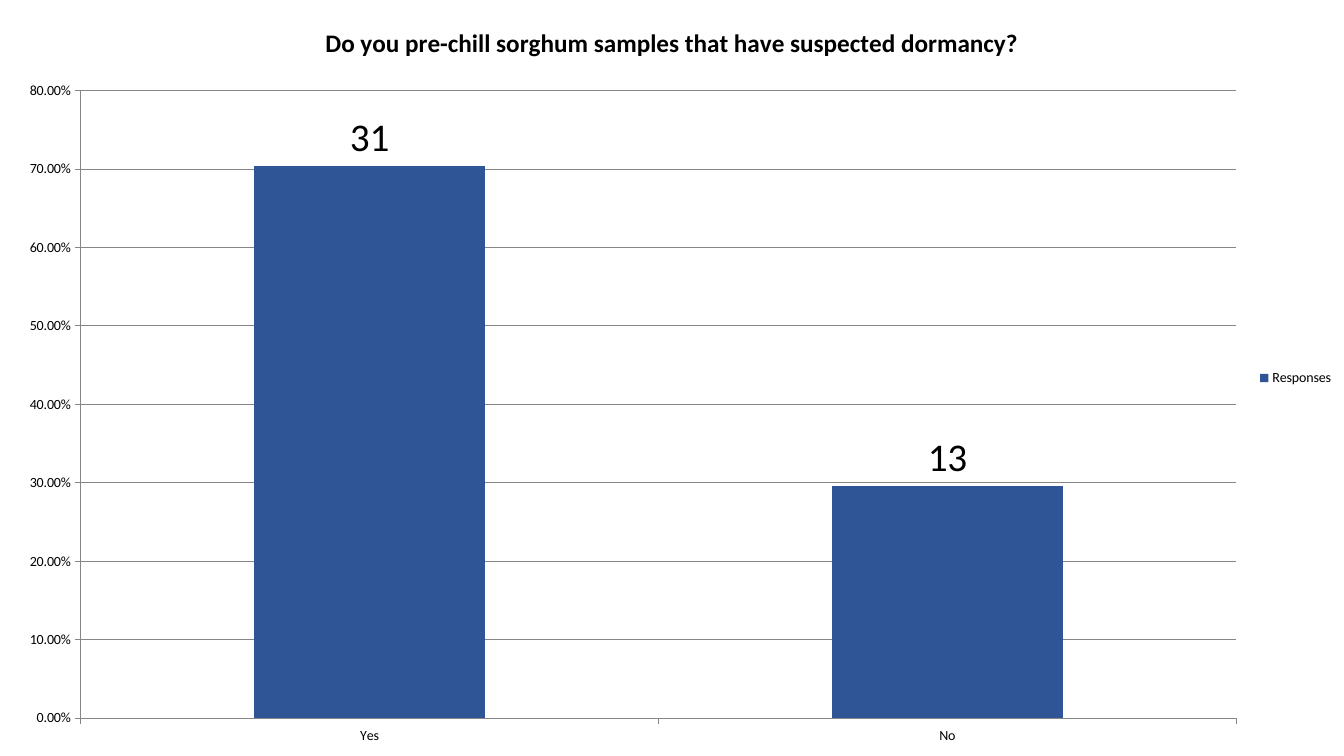
from dataclasses import dataclass

from lxml.etree import SubElement
from pptx import Presentation
from pptx.chart.data import CategoryChartData
from pptx.dml.color import RGBColor
from pptx.enum.chart import XL_CHART_TYPE as ChartType
from pptx.enum.chart import XL_LABEL_POSITION as LabelPosition
from pptx.enum.chart import XL_LEGEND_POSITION as LegendPosition
from pptx.enum.chart import XL_TICK_MARK as TickMark
from pptx.oxml.ns import qn
from pptx.util import Inches, Pt


@dataclass(frozen=True)
class Theme:
    font: str = "Calibri"
    text: RGBColor = RGBColor(0, 0, 0)
    bar: RGBColor = RGBColor(0x2F, 0x55, 0x97)
    line: RGBColor = RGBColor(0x86, 0x86, 0x86)
    title_size: Pt = Pt(18)
    body_size: Pt = Pt(10)
    label_size: Pt = Pt(28)
    line_width: Pt = Pt(0.75)


class SurveySlide:
    """Draws survey charts on one slide in a shared theme."""

    def __init__(self, slide, theme):
        self.slide = slide
        self.theme = theme

    def apply(self, target, values):
        for name, value in values.items():
            setattr(target, name, value)

    def style_font(self, font, size, bold=False):
        self.apply(font, {"name": self.theme.font, "size": size, "bold": bold})
        font.color.rgb = self.theme.text

    def style_line(self, line):
        line.color.rgb = self.theme.line
        line.width = self.theme.line_width

    def add_text(self, text_frame, text, size, bold=False):
        run = text_frame.paragraphs[0].add_run()
        run.text = text
        self.style_font(run.font, size, bold)

    def add_column_chart(self, box, title, series_name, answers):
        data = CategoryChartData(number_format="0.00%")
        data.categories = [answer for answer, _, _ in answers]
        data.add_series(series_name, [share for _, share, _ in answers])
        frame = self.slide.shapes.add_chart(
            ChartType.COLUMN_CLUSTERED, *map(Inches, box), data)
        chart = frame.chart
        self.style_font(chart.font, self.theme.body_size)
        self.apply(chart, {"has_title": True, "has_legend": True})
        self.add_text(chart.chart_title.text_frame, title, self.theme.title_size, True)
        self.apply(chart.legend, {"position": LegendPosition.RIGHT,
                                  "include_in_layout": False})
        self.style_axes(chart)
        self.style_columns(chart.plots[0], [count for _, _, count in answers])
        return chart

    def style_axes(self, chart):
        for axis in (chart.category_axis, chart.value_axis):
            self.apply(axis, {"major_tick_mark": TickMark.OUTSIDE,
                              "minor_tick_mark": TickMark.NONE})
            self.style_line(axis.format.line)
        self.apply(chart.value_axis, {"minimum_scale": 0, "maximum_scale": 0.8,
                                      "major_unit": 0.1,
                                      "has_major_gridlines": True})
        self.apply(chart.value_axis.tick_labels, {"number_format": "0.00%",
                                                  "number_format_is_linked": False})
        self.style_line(chart.value_axis.major_gridlines.format.line)

    def style_columns(self, plot, counts):
        self.apply(plot, {"gap_width": 150, "vary_by_categories": False})
        series = plot.series[0]
        series.format.fill.solid()
        series.format.fill.fore_color.rgb = self.theme.bar
        labels = series.data_labels
        self.apply(labels, {"show_value": True, "number_format": "0.00%",
                            "number_format_is_linked": False,
                            "position": LabelPosition.OUTSIDE_END})
        self.style_font(labels.font, self.theme.label_size)
        for index, count in enumerate(counts):
            label = series.points[index].data_label
            self.add_text(label.text_frame, str(count), self.theme.label_size)
            label.position = LabelPosition.OUTSIDE_END

    def place_plot(self, chart, x, y, w, h):
        area = chart.plots[0]._element.getparent()
        layout = area.find(qn("c:layout"))
        if layout is None:
            layout = SubElement(area, qn("c:layout"))
            area.insert(0, layout)
        manual = SubElement(layout, qn("c:manualLayout"))
        values = {"layoutTarget": "inner", "xMode": "edge", "yMode": "edge",
                  "x": x, "y": y, "w": w, "h": h}
        for name, value in values.items():
            SubElement(manual, qn(f"c:{name}")).set("val", str(value))


def main():
    presentation = Presentation()
    presentation.slide_width = Inches(13.33)
    presentation.slide_height = Inches(7.5)
    slide = presentation.slides.add_slide(presentation.slide_layouts[6])
    survey = SurveySlide(slide, Theme())
    chart = survey.add_column_chart(
        (0, 0, 13.33, 7.5),
        "Do you pre-chill sorghum samples that have suspected dormancy?",
        "Responses",
        [("Yes", 0.7045, 31), ("No", 0.2955, 13)])
    survey.place_plot(chart, 0.06, 0.12, 0.86, 0.83)
    presentation.save("out.pptx")


if __name__ == "__main__":
    main()
